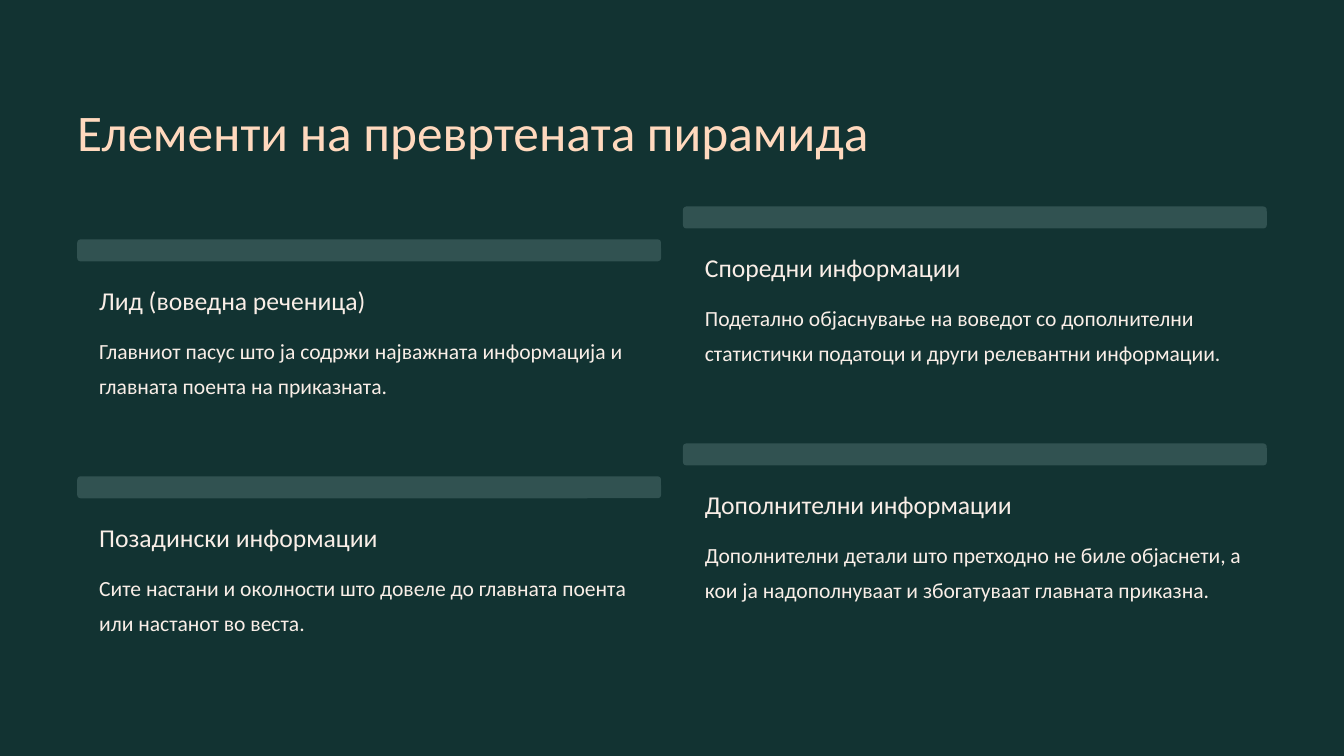
"""Builds a slide with the four elements of the inverted pyramid."""
from pptx import Presentation
from pptx.dml.color import RGBColor
from pptx.enum.shapes import MSO_SHAPE
from pptx.util import Pt


def color(hex_value):
    return RGBColor.from_string(hex_value)


class Deck:
    FONT = "Calibri"
    BACKGROUND = "123332"
    BAR = "315251"
    TITLE = "FFD9BE"
    TEXT = "F9EEE7"

    def __init__(self):
        self.prs = Presentation()
        self.prs.slide_width, self.prs.slide_height = Pt(1152), Pt(648)
        self.slide = None

    def add_slide(self):
        self.slide = self.prs.slides.add_slide(self.prs.slide_layouts[6])
        fill = self.slide.background.fill
        fill.solid()
        fill.fore_color.rgb = color(self.BACKGROUND)

    def text(self, x, y, w, h, text, size, leading, hex_value):
        tf = self.slide.shapes.add_textbox(Pt(x), Pt(y), Pt(w), Pt(h)).text_frame
        tf.margin_left = tf.margin_top = tf.margin_right = tf.margin_bottom = 0
        tf.word_wrap = True
        p = tf.paragraphs[0]
        p.text = text
        p.line_spacing = Pt(leading)
        p.font.name = self.FONT
        p.font.size = Pt(size)
        p.font.color.rgb = color(hex_value)

    def bar(self, x, y, w, h):
        sp = self.slide.shapes.add_shape(
            MSO_SHAPE.ROUNDED_RECTANGLE, Pt(x), Pt(y), Pt(w), Pt(h))
        sp.adjustments[0] = 0.15
        sp.shadow.inherit = False
        sp.fill.solid()
        sp.fill.fore_color.rgb = color(self.BAR)
        sp.line.fill.background()

    def card(self, x, y, heading, body):
        self.bar(x, y, 500.4, 18.8)
        self.text(x + 18.8, y + 37.5, 290, 27.4, heading, 22, 27.5, self.TEXT)
        self.text(x + 18.8, y + 76.7, 463, 60.5, body, 18.5, 30, self.TEXT)


COLUMNS = [
    (66.2, 205.2, [
        ("Лид (воведна реченица)",
         "Главниот пасус што ја содржи најважната информација и главната "
         "поента на приказната."),
        ("Позадински информации",
         "Сите настани и околности што довеле до главната поента или "
         "настанот во веста."),
    ]),
    (585.4, 177, [
        ("Споредни информации",
         "Подетално објаснување на воведот со дополнителни статистички "
         "податоци и други релевантни информации."),
        ("Дополнителни информации",
         "Дополнителни детали што претходно не биле објаснети, а кои ја "
         "надополнуваат и збогатуваат главната приказна."),
    ]),
]
ROW_PITCH = 203.1


def main():
    deck = Deck()
    deck.add_slide()
    deck.text(66.2, 83.5, 720, 55.4, "Елементи на превртената пирамида",
              44, 55, deck.TITLE)
    for x, top, cards in COLUMNS:
        for row, (heading, body) in enumerate(cards):
            deck.card(x, top + row * ROW_PITCH, heading, body)
    deck.prs.save("out.pptx")


if __name__ == "__main__":
    main()
